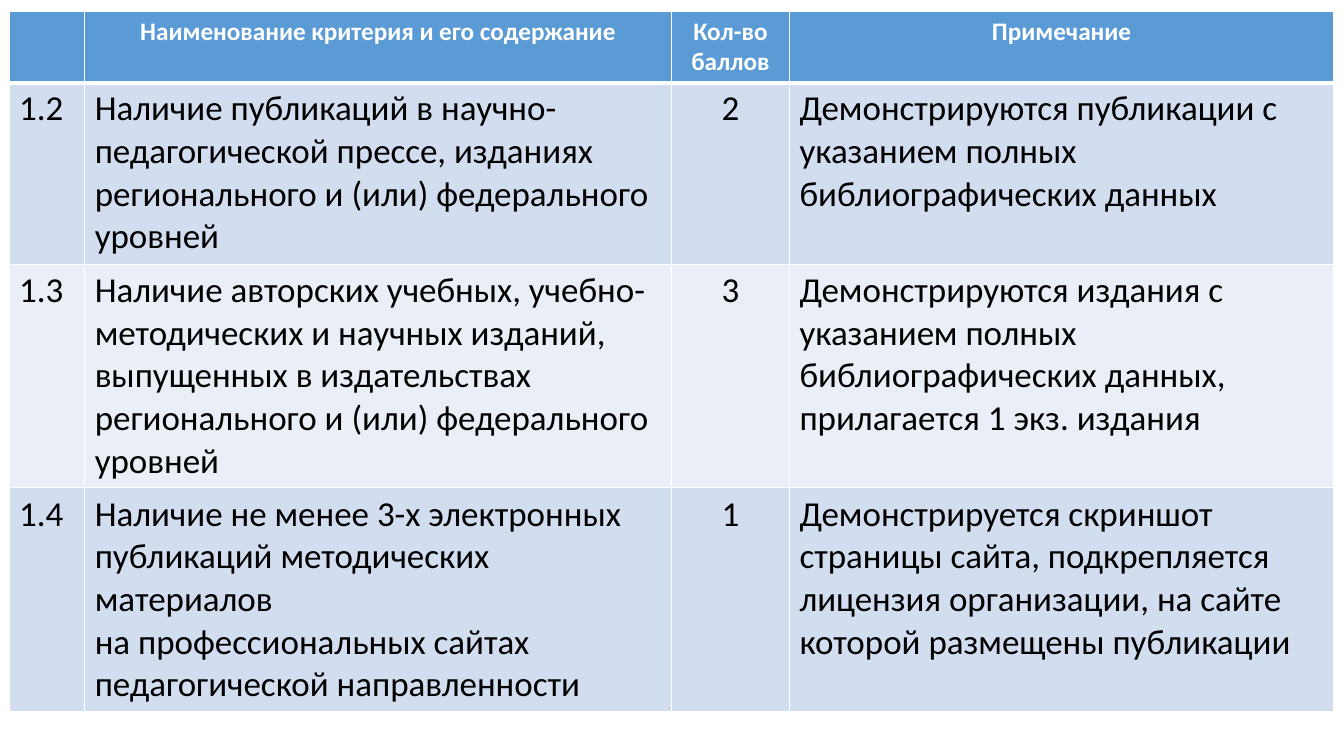
"""Build a slide with a table of publication criteria, scores and notes."""
from dataclasses import dataclass

from lxml import etree
from pptx import Presentation
from pptx.dml.color import RGBColor
from pptx.enum import text
from pptx.oxml import ns
from pptx.util import Inches, Pt


@dataclass(frozen=True)
class Theme:
    font: str = "Calibri"
    header_size: int = 18
    body_size: int = 25
    header_fill: str = "5B9BD5"
    band_fills: tuple[str, str] = ("D2DEEF", "EAEFF7")
    light: str = "FFFFFF"
    dark: str = "000000"
    border_width: int = 1
    header_rule_width: int = 3


@dataclass(frozen=True)
class Column:
    title: str
    width: float
    centred: bool = False


@dataclass(frozen=True)
class Criterion:
    number: str
    content: str
    score: str
    note: str
    height: float


THEME = Theme()
HEADER_HEIGHT = 0.7
COLUMNS = [
    Column("", 0.75),
    Column("Наименование критерия и его содержание", 5.82),
    Column("Кол-во\nбаллов", 1.17, centred=True),
    Column("Примечание", 5.4),
]
CRITERIA = [
    Criterion(
        "1.2",
        "Наличие публикаций в научно-педагогической прессе, изданиях\n"
        "регионального и (или) федерального уровней",
        "2",
        "Демонстрируются публикации с\nуказанием полных библиографических данных",
        1.8,
    ),
    Criterion(
        "1.3",
        "Наличие авторских учебных, учебно-методических и научных изданий,\n"
        "выпущенных в издательствах регионального и (или) федерального\nуровней",
        "3",
        "Демонстрируются издания с указанием полных библиографических данных,\n"
        "прилагается 1 экз. издания",
        2.22,
    ),
    Criterion(
        "1.4",
        "Наличие не менее 3-х электронных публикаций методических материалов\n"
        "на профессиональных сайтах педагогической направленности",
        "1",
        "Демонстрируется скриншот страницы сайта, подкрепляется лицензия "
        "организации, на сайте которой размещены публикации",
        2.22,
    ),
]


def set_borders(cell, top: float, bottom: float) -> None:
    """Draw the four cell borders with the given top and bottom widths."""
    properties = cell._tc.get_or_add_tcPr()
    side = THEME.border_width
    for tag, width in (("lnL", side), ("lnR", side), ("lnT", top), ("lnB", bottom)):
        line = etree.SubElement(properties, ns.qn(f"a:{tag}"), w=str(Pt(width)))
        fill = etree.SubElement(line, ns.qn("a:solidFill"))
        etree.SubElement(fill, ns.qn("a:srgbClr"), val=THEME.light)


def write_text(frame, content: str, *, size: int, color: str, bold: bool, centred: bool) -> None:
    """Write one formatted paragraph for each line of the content."""
    frame.text = content
    for paragraph in frame.paragraphs:
        paragraph.alignment = text.PP_ALIGN.CENTER if centred else text.PP_ALIGN.LEFT
        font = paragraph.font
        font.name, font.size, font.bold = THEME.font, Pt(size), bold
        font.color.rgb = RGBColor.from_string(color)
        for run in paragraph.runs:
            run.font.bold = bold
            run.font.color.rgb = RGBColor.from_string(color)
            run.font.name, run.font.size = THEME.font, Pt(size)


def fill_cell(cell, content: str, row: int, centred: bool) -> None:
    """Format a cell as part of the header or of a banded body row."""
    is_header = row == 0
    rule, thin = THEME.header_rule_width, THEME.border_width
    set_borders(cell, top=rule if row == 1 else thin, bottom=rule if is_header else thin)
    fill = THEME.header_fill if is_header else THEME.band_fills[(row - 1) % 2]
    cell.fill.solid()
    cell.fill.fore_color.rgb = RGBColor.from_string(fill)
    write_text(
        cell.text_frame,
        content,
        size=THEME.header_size if is_header else THEME.body_size,
        color=THEME.light if is_header else THEME.dark,
        bold=is_header,
        centred=is_header or centred,
    )


def add_criteria_table(slide) -> None:
    """Add the criteria table to the slide."""
    rows = [[column.title for column in COLUMNS]]
    rows += [[item.number, item.content, item.score, item.note] for item in CRITERIA]
    heights = [HEADER_HEIGHT] + [item.height for item in CRITERIA]
    width = sum(column.width for column in COLUMNS)
    table = slide.shapes.add_table(
        len(rows), len(COLUMNS),
        Inches(0.09), Inches(0.11), Inches(width), Inches(sum(heights)),
    ).table
    for index, column in enumerate(COLUMNS):
        table.columns[index].width = Inches(column.width)
    for row, (contents, height) in enumerate(zip(rows, heights)):
        table.rows[row].height = Inches(height)
        for index, content in enumerate(contents):
            fill_cell(table.cell(row, index), content, row, COLUMNS[index].centred)


def main() -> None:
    """Create and save the presentation."""
    presentation = Presentation()
    presentation.slide_width, presentation.slide_height = Inches(13.33), Inches(7.5)
    slide = presentation.slides.add_slide(presentation.slide_layouts[6])
    add_criteria_table(slide)
    presentation.save("out.pptx")


if __name__ == "__main__":
    main()
